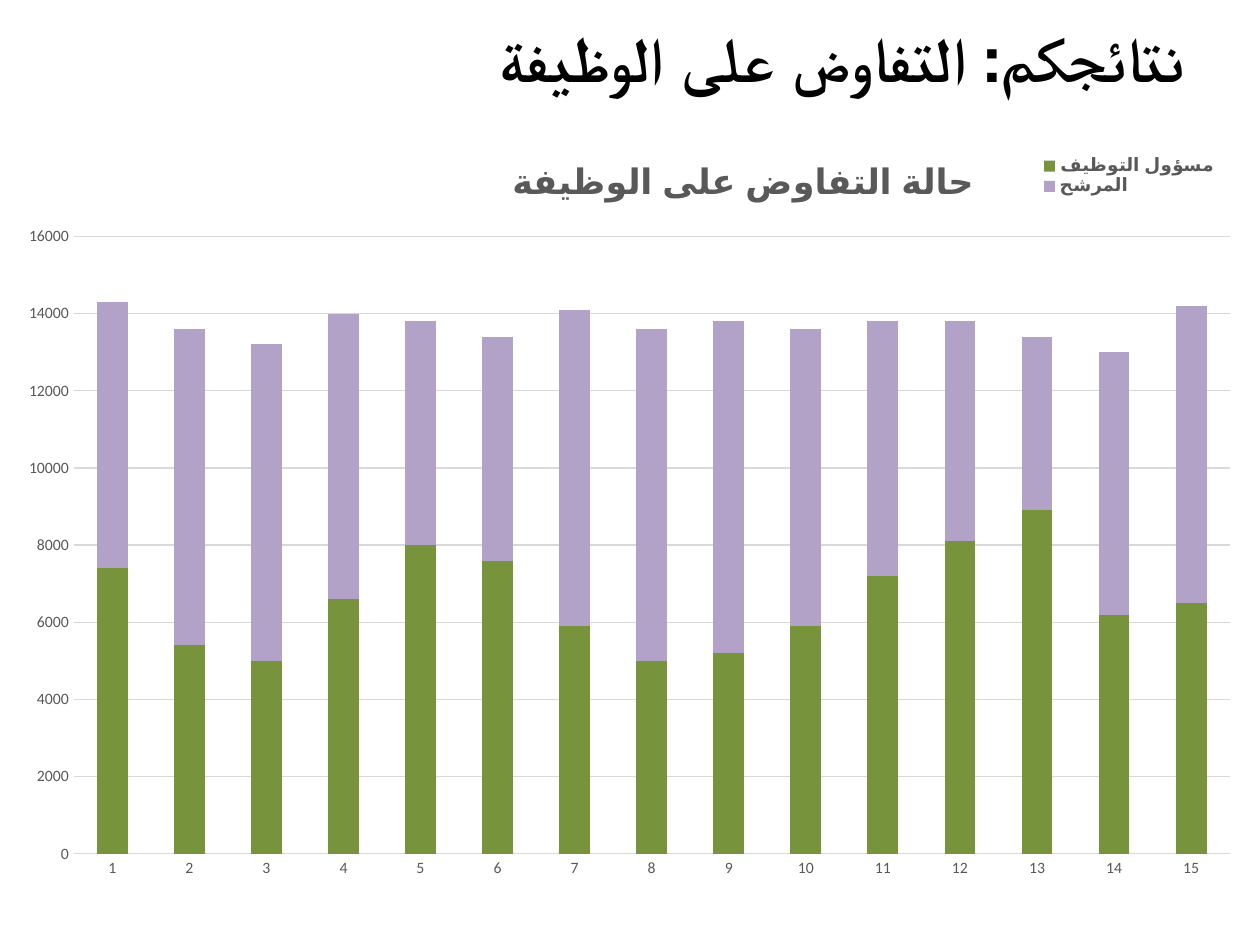
from lxml.etree import SubElement
from pptx import Presentation
from pptx.chart.data import CategoryChartData
from pptx.dml.color import RGBColor
from pptx.enum.chart import XL_CHART_TYPE, XL_LEGEND_POSITION, XL_TICK_MARK
from pptx.enum.text import MSO_ANCHOR, PP_ALIGN
from pptx.oxml.ns import qn
from pptx.util import Inches, Pt

BLACK = RGBColor(0x00, 0x00, 0x00)
GRAY = RGBColor(0x59, 0x59, 0x59)
GRID = RGBColor(0xD9, 0xD9, 0xD9)
GREEN = RGBColor(0x77, 0x93, 0x3C)
PURPLE = RGBColor(0xB3, 0xA2, 0xC7)

SERIES = [
    ("مسؤول التوظيف", GREEN, [7400, 5400, 5000, 6600, 8000, 7600, 5900, 5000,
                              5200, 5900, 7200, 8100, 8900, 6200, 6500]),
    ("المرشح", PURPLE, [6900, 8200, 8200, 7400, 5800, 5800, 8200, 8600,
                        8600, 7700, 6600, 5700, 4500, 6800, 7700]),
]


def set_font(font, name, size, color, bold=False):
    values = {"name": name, "size": Pt(size), "bold": bold}
    for key, value in values.items():
        setattr(font, key, value)
    font.color.rgb = color


def set_layout(parent, position, after=None, **settings):
    """Place a chart part by shares of the chart's size."""
    for old in parent.findall(qn("c:layout")):
        parent.remove(old)
    layout = SubElement(parent, qn("c:layout"))
    manual = SubElement(layout, qn("c:manualLayout"))
    shares = dict(zip("xywh", position))
    modes = {f"{key}Mode": "edge" for key in "xy"}
    for key, value in {**settings, **modes, **shares}.items():
        SubElement(manual, qn(f"c:{key}")).set("val", str(value))
    if after is None:
        parent.insert(0, layout)
    else:
        parent.find(qn(after)).addnext(layout)


def add_heading(slide, box, text):
    tf = slide.shapes.add_textbox(*box).text_frame
    tf.word_wrap = True
    tf.vertical_anchor = MSO_ANCHOR.MIDDLE
    p = tf.paragraphs[0]
    p.alignment = PP_ALIGN.RIGHT
    p._p.get_or_add_pPr().set("rtl", "1")
    r = p.add_run()
    r.text = text
    set_font(r.font, "Calibri", 36, BLACK, True)


def style_axes(chart):
    for axis in (chart.category_axis, chart.value_axis):
        axis.major_tick_mark = axis.minor_tick_mark = XL_TICK_MARK.NONE
        axis.format.line.fill.background()
        set_font(axis.tick_labels.font, "Calibri", 9, GRAY)
    values = chart.value_axis
    values.minimum_scale, values.maximum_scale, values.major_unit = 0, 16000, 2000
    line = values.major_gridlines.format.line
    line.color.rgb = GRID
    line.width = Pt(0.75)


def add_results_chart(slide, box, title):
    data = CategoryChartData()
    data.categories = [str(n + 1) for n in range(len(SERIES[0][2]))]
    for name, _, values in SERIES:
        data.add_series(name, values)
    chart = slide.shapes.add_chart(XL_CHART_TYPE.COLUMN_STACKED, *box, data).chart
    set_font(chart.font, "Calibri", 10, BLACK)

    # Stacked columns
    plot = chart.plots[0]
    plot.gap_width, plot.overlap, plot.vary_by_categories = 150, 100, False
    for series, (_, color, _) in zip(plot.series, SERIES):
        series.format.fill.solid()
        series.format.fill.fore_color.rgb = color
    style_axes(chart)
    plot_area = chart._chartSpace.chart.plotArea
    set_layout(plot_area, (0.034, 0.136, 0.965, 0.806), layoutTarget="inner")

    # Chart title
    chart.has_title = True
    p = chart.chart_title.text_frame.paragraphs[0]
    r = p.add_run()
    r.text = title
    set_font(r.font, "Cambria", 20, GRAY, True)
    set_layout(chart.chart_title._element, (0.395, 0.03), "c:tx")

    # Legend in the top right corner
    chart.has_legend = True
    legend = chart.legend
    legend.position = XL_LEGEND_POSITION.BOTTOM
    legend.include_in_layout = False
    set_font(legend.font, "Cambria", 10.5, GRAY, True)
    set_layout(legend._element, (0.835, 0.03, 0.16, 0.055), "c:legendPos")


def main():
    prs = Presentation()
    prs.slide_width, prs.slide_height = Inches(10), Inches(7.5)
    s = prs.slides.add_slide(prs.slide_layouts[6])
    add_heading(s, [Inches(v) for v in (0.5, -0.17, 9, 1.25)],
                "نتائجكم: التفاوض على الوظيفة")
    add_results_chart(s, [Inches(v) for v in (0.23, 1.05, 9.54, 6.08)],
                      "حالة التفاوض على الوظيفة")
    prs.save("out.pptx")


if __name__ == "__main__":
    main()
